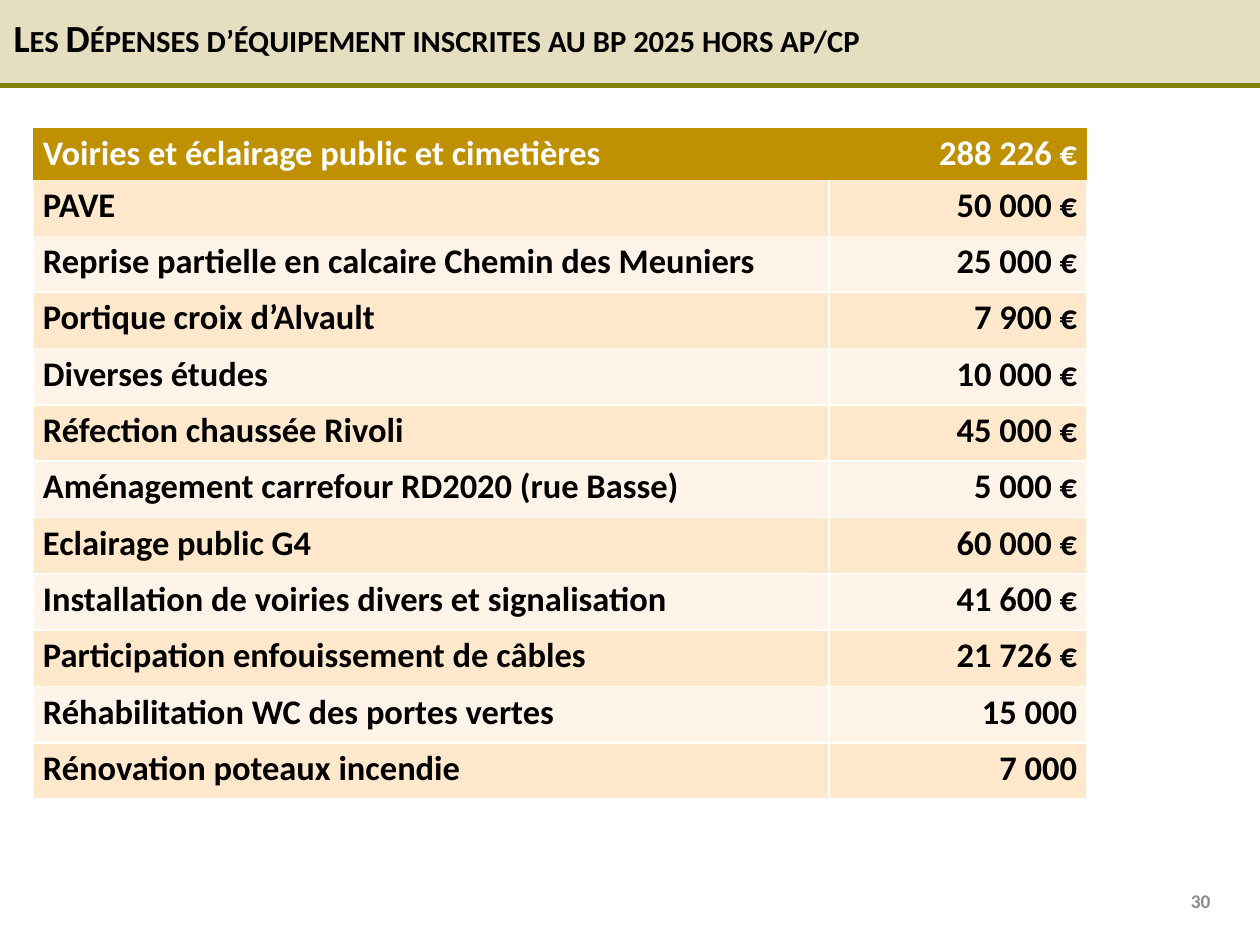
from dataclasses import dataclass

from lxml.etree import SubElement as Sub
from pptx import Presentation as Deck
from pptx.dml.color import RGBColor as Rgb
from pptx.enum.shapes import MSO_CONNECTOR as Connector, MSO_SHAPE as Preset
from pptx.enum.text import MSO_ANCHOR as Anchor, PP_ALIGN as Align
from pptx.oxml.ns import qn
from pptx.util import Pt

COLORS = {
    "band": "E5DEC1",
    "rule": "808000",
    "header": "BF9000",
    "odd": "FFE8CC",
    "even": "FFF4E7",
    "white": "FFFFFF",
    "black": "000000",
    "grey": "8C8C8C",
}
PAGE_WIDTH, PAGE_HEIGHT = 657.4, 493.2
COLUMN_WIDTHS = (415.4, 134.6)
HEADER_HEIGHT, ROW_HEIGHT = 24, 29.4
CELL_FORMAT = {
    "margin_left": Pt(5.2),
    "margin_right": Pt(5.2),
    "margin_top": Pt(2.6),
    "margin_bottom": Pt(2.6),
    "vertical_anchor": Anchor.TOP,
}


@dataclass(frozen=True)
class Expense:
    label: str
    amount: str
    fill: str
    borders: str
    ink: str = "black"


def banded_expenses() -> list[Expense]:
    entries = [
        ("PAVE", "50 000 €"),
        ("Reprise partielle en calcaire Chemin des Meuniers", "25 000 €"),
        ("Portique croix d’Alvault", "7 900 €"),
        ("Diverses études", "10 000 €"),
        ("Réfection chaussée Rivoli", "45 000 €"),
        ("Aménagement carrefour RD2020 (rue Basse)", "5 000 €"),
        ("Eclairage public G4", "60 000 €"),
        ("Installation de voiries divers et signalisation", "41 600 €"),
        ("Participation enfouissement de câbles", "21 726 €"),
        ("Réhabilitation WC des portes vertes", "15 000"),
        ("Rénovation poteaux incendie", "7 000"),
    ]
    first_borders = {1: "LR", 2: "LRB"}
    return [
        Expense(label, amount, "odd" if number % 2 else "even",
                first_borders.get(number, "LRTB"))
        for number, (label, amount) in enumerate(entries, 1)
    ]


def apply_format(target, values: dict) -> None:
    for name, value in values.items():
        setattr(target, name, value)


def write_text(frame, text: str, size: float, ink: str, align=Align.LEFT):
    para = frame.paragraphs[0]
    para.alignment = align
    span = para.add_run()
    span.text = text
    apply_format(span.font, {"name": "Calibri", "size": Pt(size), "bold": True})
    span.font.color.rgb = Rgb.from_string(COLORS[ink])
    return span


def set_borders(cell, sides: str) -> None:
    properties = cell._tc.get_or_add_tcPr()
    for side in "LRTB":
        line = Sub(properties, qn(f"a:ln{side}"), w=str(Pt(1)))
        if side in sides:
            fill = Sub(line, qn("a:solidFill"))
            Sub(fill, qn("a:srgbClr"), val=COLORS["white"])
        else:
            Sub(line, qn("a:noFill"))


def add_title(page) -> None:
    box = page.shapes.add_shape(Preset.RECTANGLE, 0, Pt(-2.2), Pt(PAGE_WIDTH), Pt(46))
    box.shadow.inherit = False
    box.fill.solid()
    box.fill.fore_color.rgb = Rgb.from_string(COLORS["band"])
    box.line.fill.background()
    apply_format(box.text_frame, {"word_wrap": True, "vertical_anchor": Anchor.MIDDLE})
    span = write_text(
        box.text_frame,
        "Les Dépenses d’équipement inscrites au bp 2025 hors ap/cp",
        20,
        "black",
    )
    span._r.get_or_add_rPr().set("cap", "small")
    box.text_frame.paragraphs[0].line_spacing = 0.9

    rule = page.shapes.add_connector(
        Connector.STRAIGHT, 0, Pt(44.6), Pt(PAGE_WIDTH), Pt(44.6))
    rule.line.color.rgb = Rgb.from_string(COLORS["rule"])
    rule.line.width = Pt(2.25)
    Sub(rule._element.spPr, qn("a:effectLst"))


def add_expense_table(page, expenses: list[Expense]) -> None:
    height = HEADER_HEIGHT + ROW_HEIGHT * (len(expenses) - 1)
    table = page.shapes.add_table(
        len(expenses), len(COLUMN_WIDTHS),
        Pt(17.2), Pt(66.9), Pt(sum(COLUMN_WIDTHS)), Pt(height),
    ).table
    for column, width in zip(table.columns, COLUMN_WIDTHS):
        column.width = Pt(width)
    for index, (row, expense) in enumerate(zip(table.rows, expenses)):
        row.height = Pt(ROW_HEIGHT if index else HEADER_HEIGHT)
        contents = ((expense.label, Align.LEFT), (expense.amount, Align.RIGHT))
        for cell, (text, align) in zip(row.cells, contents):
            apply_format(cell, CELL_FORMAT)
            set_borders(cell, expense.borders)
            cell.fill.solid()
            cell.fill.fore_color.rgb = Rgb.from_string(COLORS[expense.fill])
            write_text(cell.text_frame, text, 18, expense.ink, align)


def add_page_number(page) -> None:
    box = page.shapes.add_textbox(Pt(465.1), Pt(457.2), Pt(173.5), Pt(26))
    apply_format(box.text_frame, {"word_wrap": True, "vertical_anchor": Anchor.MIDDLE})
    write_text(box.text_frame, "30", 10.1, "grey", Align.RIGHT)


def main() -> None:
    deck = Deck()
    apply_format(deck, {"slide_width": Pt(PAGE_WIDTH), "slide_height": Pt(PAGE_HEIGHT)})
    page = deck.slides.add_slide(deck.slide_layouts[6])
    header = Expense("Voiries et éclairage public et cimetières", "288 226 €",
                     "header", "", "white")
    add_page_number(page)
    add_title(page)
    add_expense_table(page, [header, *banded_expenses()])
    deck.save("out.pptx")


if __name__ == "__main__":
    main()
